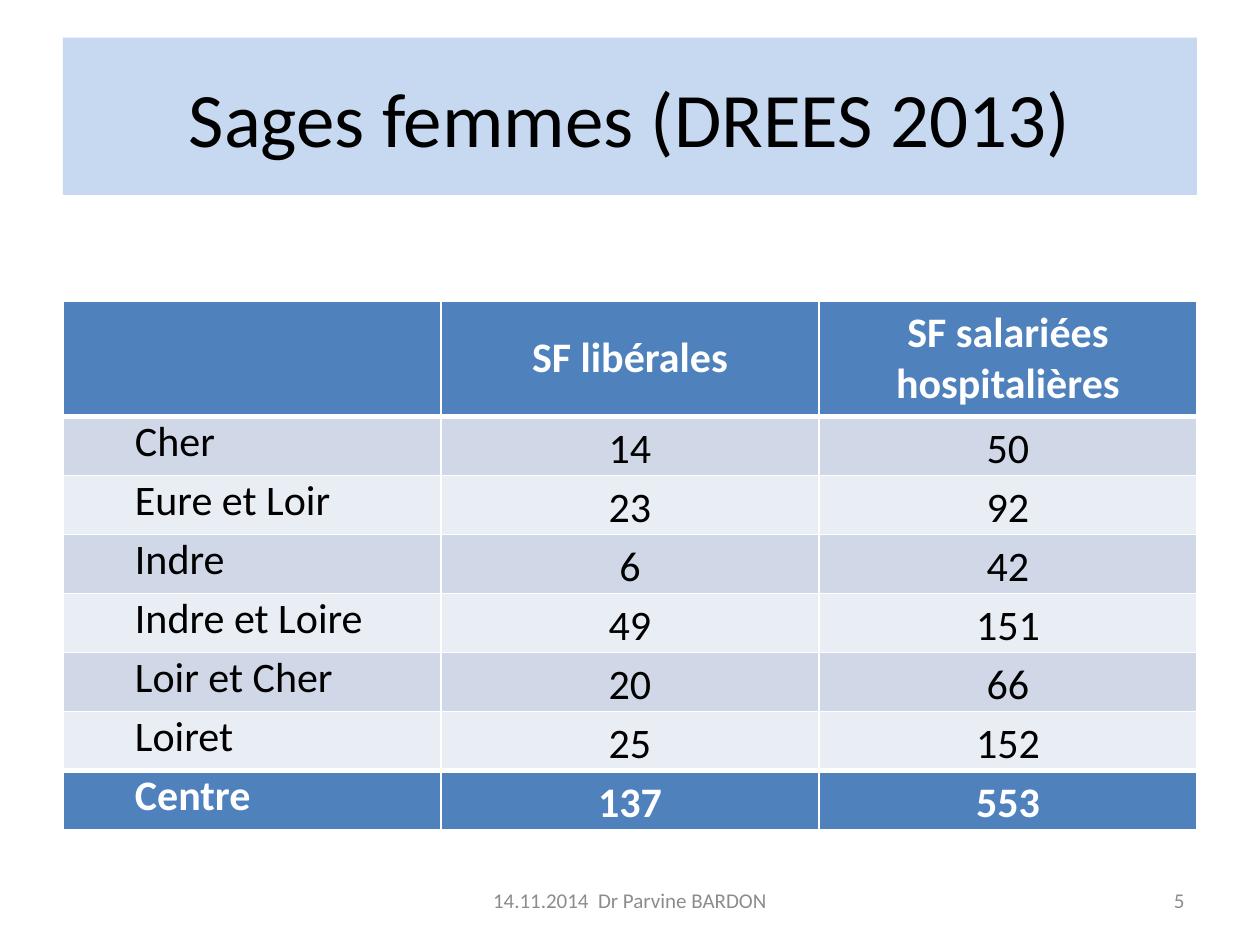
from lxml import etree
from pptx import Presentation
from pptx import util as u
from pptx.dml.color import RGBColor
from pptx.enum import shapes, text
from pptx.oxml import ns

# Content
TITLE = "Sages femmes (DREES 2013)"
HEADER = ("", "SF libérales", "SF salariées hospitalières")
DEPARTMENTS = [
    ("Cher", "14", "50"),
    ("Eure et Loir", "23", "92"),
    ("Indre", "6", "42"),
    ("Indre et Loire", "49", "151"),
    ("Loir et Cher", "20", "66"),
    ("Loiret", "25", "152"),
]
TOTAL = ("Centre", "137", "553")
FOOTER = "14.11.2014  Dr Parvine BARDON"
PAGE_NUMBER = "5"

# Colours and formats
BLACK = RGBColor(0x00, 0x00, 0x00)
WHITE = RGBColor(0xFF, 0xFF, 0xFF)
GREY = RGBColor(0x8C, 0x8C, 0x8C)
PALE_BLUE = RGBColor(0xC6, 0xD9, 0xF1)
BLUE = RGBColor(0x4F, 0x81, 0xBD)
BANDS = (RGBColor(0xD0, 0xD8, 0xE8), RGBColor(0xE9, 0xED, 0xF4))

TITLE_FONT = {"size": u.Pt(44), "color": BLACK}
STRONG_FONT = {"size": u.Pt(24), "color": WHITE, "bold": True}
BODY_FONT = {"size": u.Pt(24), "color": BLACK, "bold": False}
FOOTER_FONT = {"size": u.Pt(12), "color": GREY}
BODY_MARGINS = {"margin_left": u.Cm(0.18), "margin_right": u.Cm(0.18),
                "margin_top": 0, "margin_bottom": 0}

# Layout
MARGIN, CONTENT_WIDTH = u.Cm(1.27), u.Cm(22.86)
TABLE_TOP, HEADER_HEIGHT, ROW_HEIGHT = u.Cm(6.07), u.Cm(2.31), u.Cm(1.19)
FOOTER_TOP, FOOTER_HEIGHT = u.Cm(17.65), u.Cm(1.01)
NAME_INDENT = u.Cm(1.27)


def write(frame, words, font, align):
    paragraph = frame.paragraphs[0]
    paragraph.alignment = align
    run = paragraph.add_run()
    run.text = words
    run.font.name = "Calibri"
    for key, value in font.items():
        if key == "color":
            run.font.color.rgb = value
        else:
            setattr(run.font, key, value)
    return paragraph


def set_borders(cell, top, bottom):
    properties = cell._tc.get_or_add_tcPr()
    widths = {"a:lnL": 1, "a:lnR": 1, "a:lnT": top, "a:lnB": bottom}
    for position, (tag, width) in enumerate(widths.items()):
        line = etree.Element(ns.qn(tag), w=str(u.Pt(width)))
        fill = etree.SubElement(line, ns.qn("a:solidFill"))
        etree.SubElement(fill, ns.qn("a:srgbClr"), val=str(WHITE))
        properties.insert(position, line)


def add_title(slide):
    banner = slide.shapes.add_shape(shapes.MSO_SHAPE.RECTANGLE, MARGIN, u.Cm(0.76),
                                    CONTENT_WIDTH, u.Cm(3.17))
    banner.shadow.inherit = False
    banner.fill.solid()
    banner.fill.fore_color.rgb = PALE_BLUE
    banner.line.fill.background()
    banner.text_frame.vertical_anchor = text.MSO_ANCHOR.MIDDLE
    write(banner.text_frame, TITLE, TITLE_FONT, text.PP_ALIGN.CENTER)


def add_midwives_table(slide):
    rows = [HEADER, *DEPARTMENTS, TOTAL]
    last = len(rows) - 1
    height = HEADER_HEIGHT + last * ROW_HEIGHT
    table = slide.shapes.add_table(len(rows), len(HEADER), MARGIN, TABLE_TOP,
                                   CONTENT_WIDTH, height).table
    for column in table.columns:
        column.width = u.Cm(7.62)
    for r, row in enumerate(rows):
        table.rows[r].height = ROW_HEIGHT if r else HEADER_HEIGHT
        strong = r in (0, last)
        for c, words in enumerate(row):
            cell = table.cell(r, c)
            cell.fill.solid()
            cell.fill.fore_color.rgb = BLUE if strong else BANDS[(r - 1) % 2]
            # Thick rules set off the header and the total
            set_borders(cell, top=3 if r in (1, last) else 1,
                        bottom=3 if r in (0, last - 1) else 1)
            if r == 0:
                cell.vertical_anchor = text.MSO_ANCHOR.MIDDLE
            else:
                for key, value in BODY_MARGINS.items():
                    setattr(cell, key, value)
            if not words:
                continue
            is_name = c == 0
            align = text.PP_ALIGN.JUSTIFY if is_name else text.PP_ALIGN.CENTER
            paragraph = write(cell.text_frame, words,
                              STRONG_FONT if strong else BODY_FONT, align)
            if is_name:
                indent = paragraph._p.get_or_add_pPr()
                indent.set("marL", str(NAME_INDENT))
                indent.set("indent", "0")
            elif r:
                paragraph.line_spacing = 1.15


def add_footer(slide):
    for words, left, width, align in (
        (FOOTER, u.Cm(8.68), u.Cm(8.04), text.PP_ALIGN.CENTER),
        (PAGE_NUMBER, u.Cm(18.2), u.Cm(5.93), text.PP_ALIGN.RIGHT),
    ):
        frame = slide.shapes.add_textbox(left, FOOTER_TOP, width, FOOTER_HEIGHT).text_frame
        frame.word_wrap = True
        frame.vertical_anchor = text.MSO_ANCHOR.MIDDLE
        write(frame, words, FOOTER_FONT, align)


def main():
    deck = Presentation()
    deck.slide_width, deck.slide_height = u.Cm(25.4), u.Cm(19.05)
    slide = deck.slides.add_slide(deck.slide_layouts[6])
    add_title(slide)
    add_midwives_table(slide)
    add_footer(slide)
    deck.save("out.pptx")


if __name__ == "__main__":
    main()
